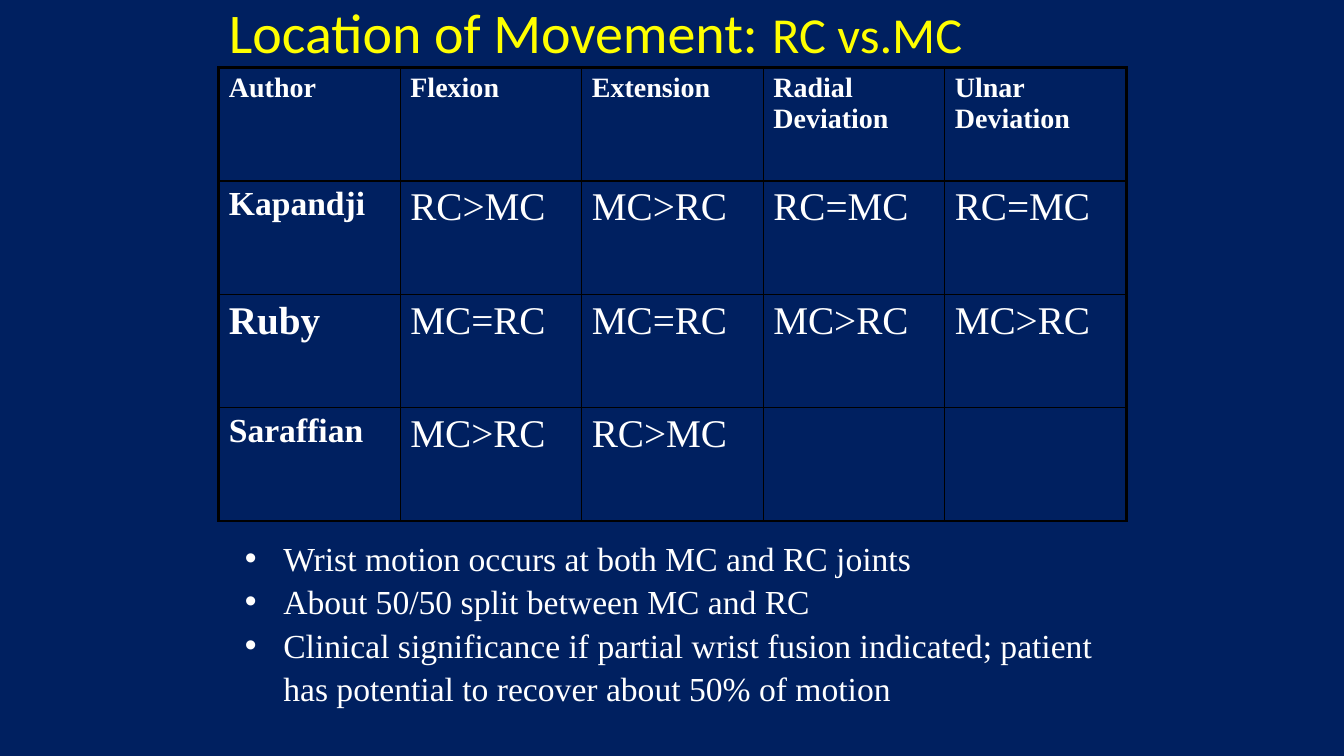
from dataclasses import dataclass

from lxml import etree
from pptx import Presentation
from pptx.dml.color import RGBColor
from pptx.enum.text import MSO_ANCHOR, MSO_AUTO_SIZE, PP_ALIGN
from pptx.oxml.ns import qn
from pptx.util import Inches, Pt

MIDDLE, TOP = MSO_ANCHOR.MIDDLE, MSO_ANCHOR.TOP
NO_AUTOFIT = MSO_AUTO_SIZE.NONE
LEFT = PP_ALIGN.LEFT


@dataclass(frozen=True)
class Theme:
    background: str = "002060"
    title: str = "FFFF00"
    text: str = "FFFFFF"
    border: str = "000000"
    title_font: str = "Calibri"
    text_font: str = "Times New Roman"
    header_size: int = 20
    author_size: int = 24
    value_size: int = 28
    list_size: int = 24
    inner_line: float = 1
    outer_line: float = 2.25


THEME = Theme()
TITLE_RUNS = [("Location of Movement:", 40), (" ", 44), ("RC vs.MC", 36)]
MOVEMENTS = [
    ("Author", "Flexion", "Extension", "Radial Deviation", "Ulnar Deviation"),
    ("Kapandji", "RC>MC", "MC>RC", "RC=MC", "RC=MC"),
    ("Ruby", "MC=RC", "MC=RC", "MC>RC", "MC>RC"),
    ("Saraffian", "MC>RC", "RC>MC", "", ""),
]
AUTHOR_SIZES = {"Ruby": THEME.value_size}
CONCLUSIONS = [
    "Wrist motion occurs at both MC and RC joints",
    "About 50/50 split between MC and RC",
    "Clinical significance if partial wrist fusion indicated; patient "
    "has potential to recover about 50% of motion",
]
TITLE_BOX = (2.17, -0.08, 9, 0.83)
TABLE_BOX = (2.17, 0.67, 9, 4.5)
LIST_BOX = (2.33, 5.25, 8.77, 1.72)
LIST_INDENT = 0.38


def place(shape, box):
    shape.left, shape.top, shape.width, shape.height = map(Inches, box)


def style(font, name, size, color, bold=False):
    font.name, font.size, font.bold = name, Pt(size), bold
    font.color.rgb = RGBColor.from_string(color)


def add_title(slide):
    title = slide.shapes.title
    place(title, TITLE_BOX)
    frame = title.text_frame
    frame.auto_size, frame.vertical_anchor = NO_AUTOFIT, MIDDLE
    paragraph = frame.paragraphs[0]
    paragraph.alignment, paragraph.line_spacing = LEFT, 0.9
    for text, size in TITLE_RUNS:
        run = paragraph.add_run()
        run.text = text
        style(run.font, THEME.title_font, size, THEME.title)


def set_borders(cell, outer_sides):
    properties = cell._tc.get_or_add_tcPr()
    for side in "LRTB":
        width = THEME.outer_line if side in outer_sides else THEME.inner_line
        line = etree.SubElement(properties, qn(f"a:ln{side}"), w=str(Pt(width)))
        fill = etree.SubElement(line, qn("a:solidFill"))
        etree.SubElement(fill, qn("a:srgbClr"), val=THEME.border)


def add_movement_table(slide):
    rows, columns = len(MOVEMENTS), len(MOVEMENTS[0])
    table = slide.shapes.add_table(rows, columns, *map(Inches, TABLE_BOX)).table
    table.first_row = table.horz_banding = False
    for row, texts in enumerate(MOVEMENTS):
        for column, text in enumerate(texts):
            cell = table.cell(row, column)
            edges = {"L": column == 0, "R": column == columns - 1,
                     "T": row == 0, "B": row == rows - 1}
            set_borders(cell, [side for side in edges if edges[side]])
            cell.fill.background()
            if row == 0:
                size = THEME.header_size
            elif column == 0:
                size = AUTHOR_SIZES.get(text, THEME.author_size)
            else:
                size = THEME.value_size
            cell.text = text
            style(cell.text_frame.paragraphs[0].font, THEME.text_font, size,
                  THEME.text, bold=row == 0 or column == 0)


def add_conclusions(slide):
    body = slide.placeholders[1]
    place(body, LIST_BOX)
    frame = body.text_frame
    frame.auto_size, frame.vertical_anchor = NO_AUTOFIT, TOP
    frame.text = "\n".join(CONCLUSIONS)
    for paragraph in frame.paragraphs:
        paragraph.space_before, paragraph.line_spacing = Pt(0), 1.08
        properties = paragraph._p.get_or_add_pPr()
        properties.set("marL", str(Inches(LIST_INDENT)))
        properties.set("indent", str(-Inches(LIST_INDENT)))
        etree.SubElement(properties, qn("a:buFont"), typeface="Arial")
        etree.SubElement(properties, qn("a:buChar"), char="•")
        style(paragraph.font, THEME.text_font, THEME.list_size, THEME.text)


def main():
    """Build the wrist movement slide."""
    presentation = Presentation()
    presentation.slide_width, presentation.slide_height = Inches(13.33), Inches(7.5)
    slide = presentation.slides.add_slide(presentation.slide_layouts[1])
    background = slide.background.fill
    background.solid()
    background.fore_color.rgb = RGBColor.from_string(THEME.background)
    add_title(slide)
    add_movement_table(slide)
    add_conclusions(slide)
    presentation.save("out.pptx")


if __name__ == "__main__":
    main()
